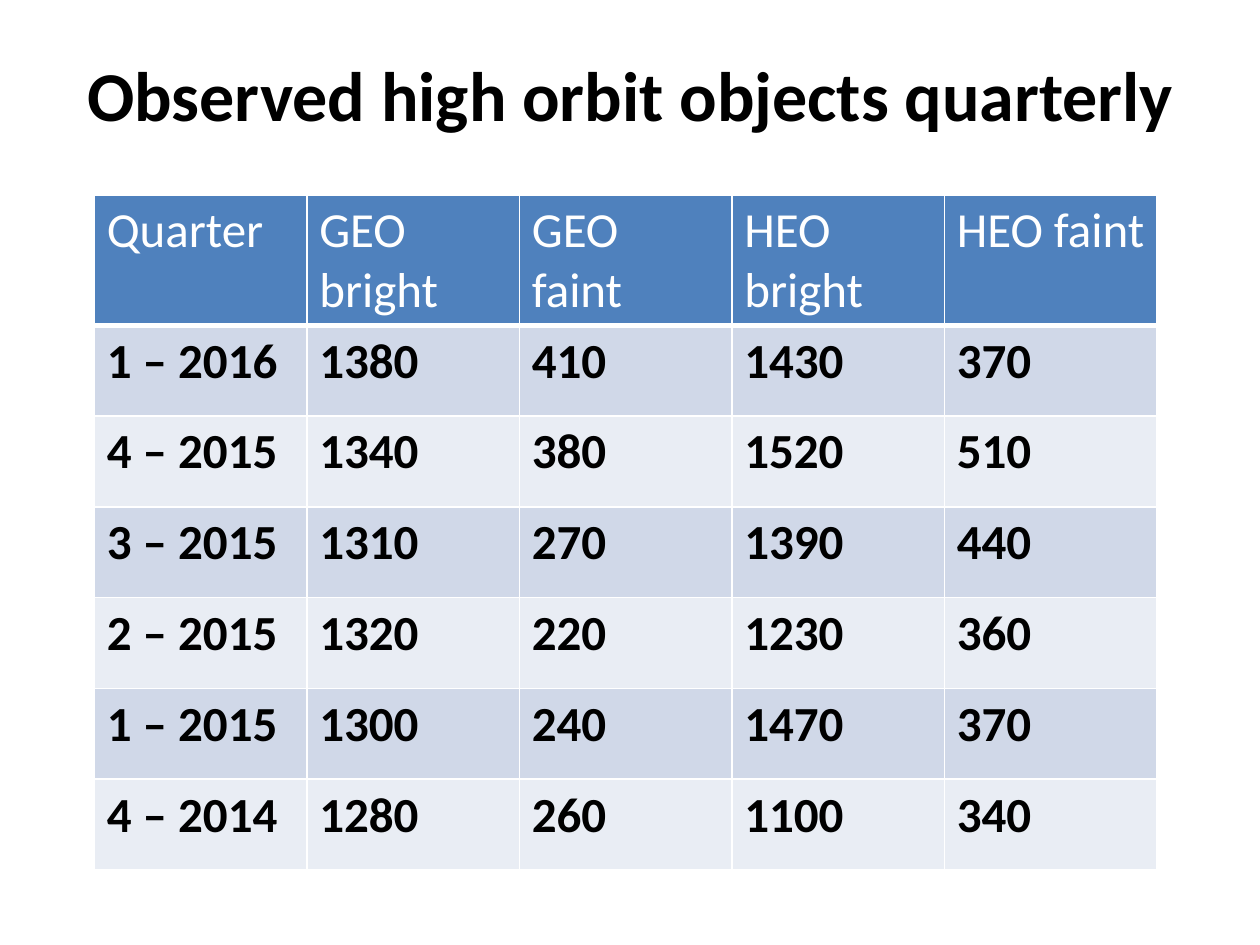
import pptx
import pptx.dml.color
import pptx.enum.text
import pptx.oxml.ns
import pptx.util
from lxml import etree

COLORS = {
    "text": "000000",
    "head_text": "FFFFFF",
    "head": "4F81BD",
    "odd": "D0D8E8",
    "even": "E9EDF4",
    "border": "FFFFFF",
}
FONT = "Calibri"
HEADERS = ["Quarter", "GEO bright", "GEO faint", "HEO bright", "HEO faint"]
QUARTERS = [
    ["1 – 2016", 1380, 410, 1430, 370],
    ["4 – 2015", 1340, 380, 1520, 510],
    ["3 – 2015", 1310, 270, 1390, 440],
    ["2 – 2015", 1320, 220, 1230, 360],
    ["1 – 2015", 1300, 240, 1470, 370],
    ["4 – 2014", 1280, 260, 1100, 340],
]


def rgb(name):
    """Return the named colour."""
    return pptx.dml.color.RGBColor.from_string(COLORS[name])


def add_run(p, text, size, color, bold):
    """Add one formatted run to a paragraph."""
    r = p.add_run()
    r.text = text
    r.font.name = FONT
    r.font.size = pptx.util.Pt(size)
    r.font.bold = bold
    r.font.color.rgb = rgb(color)


def set_borders(cell, bottom):
    """Draw the cell's four borders, with the bottom width in points."""
    qn = pptx.oxml.ns.qn
    tcPr = cell._tc.get_or_add_tcPr()
    for side, width in (("L", 1), ("R", 1), ("T", 1), ("B", bottom)):
        ln = etree.SubElement(tcPr, qn("a:ln" + side), w=str(pptx.util.Pt(width)))
        fill = etree.SubElement(ln, qn("a:solidFill"))
        etree.SubElement(fill, qn("a:srgbClr"), val=COLORS["border"])


def add_title(s, left, top, width, height, text):
    """Place the centred slide title in its box."""
    Cm = pptx.util.Cm
    sp = s.shapes.add_textbox(Cm(left), Cm(top), Cm(width), Cm(height))
    tf = sp.text_frame
    tf.word_wrap = True
    tf.vertical_anchor = pptx.enum.text.MSO_ANCHOR.TOP
    p = tf.paragraphs[0]
    p.alignment = pptx.enum.text.PP_ALIGN.CENTER
    add_run(p, text, 40, "text", True)


def add_quarter_table(s, left, top, width, height, head_height):
    """Place the table of quarterly counts in its box."""
    Cm = pptx.util.Cm
    rows = [HEADERS] + QUARTERS
    table = s.shapes.add_table(
        len(rows), len(HEADERS), Cm(left), Cm(top), Cm(width), Cm(height)
    ).table
    for col in table.columns:
        col.width = Cm(width / len(HEADERS))
    for i, values in enumerate(rows):
        is_head = i == 0
        body_height = (height - head_height) / len(QUARTERS)
        table.rows[i].height = Cm(head_height if is_head else body_height)
        fill = "head" if is_head else ("odd" if i % 2 else "even")
        for j, value in enumerate(values):
            cell = table.cell(i, j)
            set_borders(cell, 3 if is_head else 1)
            cell.fill.solid()
            cell.fill.fore_color.rgb = rgb(fill)
            p = cell.text_frame.paragraphs[0]
            add_run(p, str(value), 28, "head_text" if is_head else "text", not is_head)


def main():
    """Build the slide and save it."""
    prs = pptx.Presentation()
    prs.slide_width = pptx.util.Cm(25.4)
    prs.slide_height = pptx.util.Cm(19.05)
    s = prs.slides.add_slide(prs.slide_layouts[6])
    add_title(s, 1.09, 0.91, 23.24, 2.77, "Observed high orbit objects quarterly")
    add_quarter_table(s, 1.9, 3.93, 21.42, 13.6, 2.62)
    prs.save("out.pptx")


if __name__ == "__main__":
    main()
